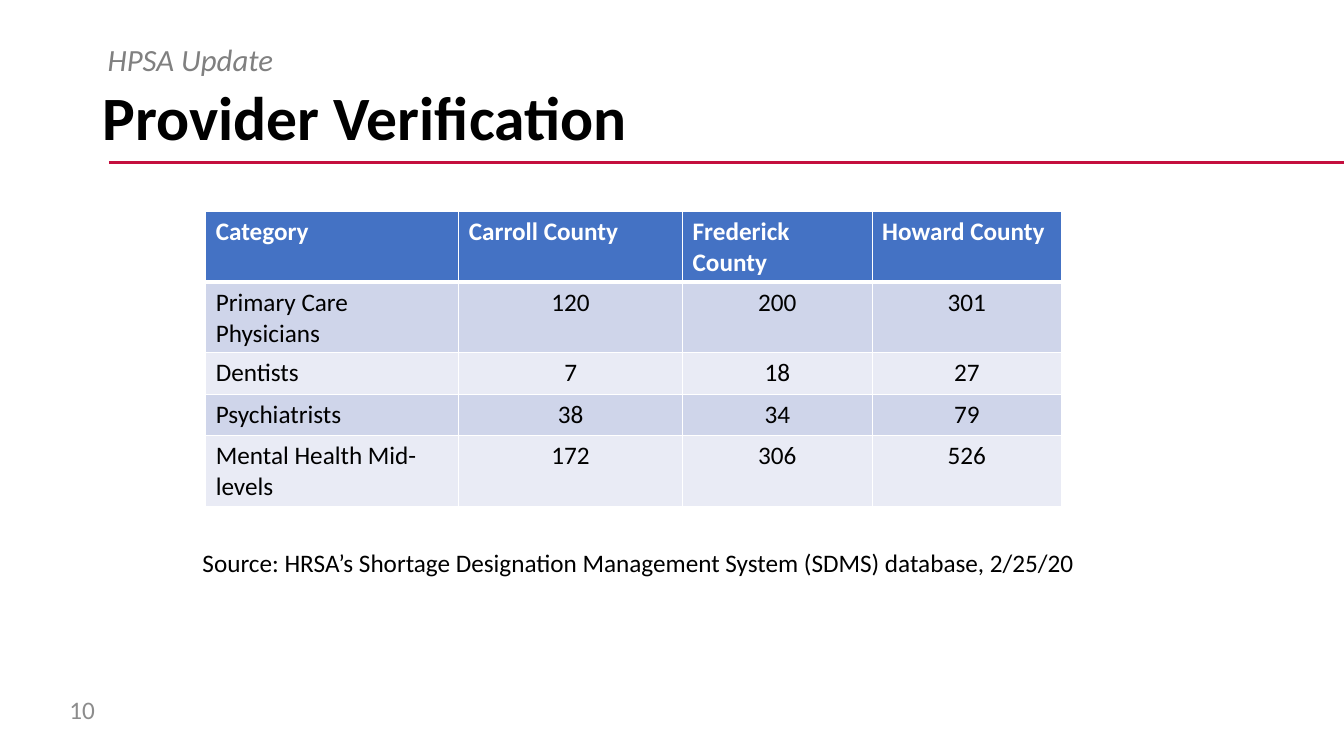
from dataclasses import dataclass

from lxml.etree import SubElement as Sub
from pptx import Presentation
from pptx.dml.color import RGBColor as RGB
from pptx.enum.shapes import MSO_CONNECTOR as Conn
from pptx.enum.text import MSO_ANCHOR as Anchor, PP_ALIGN as Align
from pptx.oxml.ns import qn
from pptx.util import Inches, Pt


@dataclass(frozen=True)
class Theme:
    font: str = "Calibri"
    white: str = "FFFFFF"
    black: str = "000000"
    gray: str = "808080"
    pale: str = "8C8C8C"
    red: str = "C40E3E"
    head: str = "4472C4"
    bands: tuple = ("CFD5EA", "E9EBF5")
    title: int = 44
    topic: int = 22
    body: int = 18


THEME = Theme()
COLS = (2.51, 2.22, 1.88, 1.88)
ROW = 0.41
ROWS = (
    ("Category", "Carroll County", "Frederick County", "Howard County"),
    ("Primary Care Physicians", "120", "200", "301"),
    ("Dentists", "7", "18", "27"),
    ("Psychiatrists", "38", "34", "79"),
    ("Mental Health Mid-levels", "172", "306", "526"),
)


def write(frame, text, size=THEME.body, color=THEME.black, bold=False,
          italic=False, align=Align.LEFT, space=1.0):
    """Put one formatted paragraph in a text frame."""
    para = frame.paragraphs[0]
    para.alignment = align
    para.line_spacing = space
    run = para.add_run()
    run.text = text
    font = run.font
    font.name, font.size = THEME.font, Pt(size)
    font.bold, font.italic = bold, italic
    font.color.rgb = RGB.from_string(color)


def add_text(slide, box, text, anchor=Anchor.TOP, **style):
    frame = slide.shapes.add_textbox(*map(Inches, box)).text_frame
    frame.word_wrap = True
    frame.vertical_anchor = anchor
    write(frame, text, **style)


def add_rule(slide, left, right, y):
    ends = map(Inches, (left, y, right, y))
    rule = slide.shapes.add_connector(Conn.STRAIGHT, *ends)
    rule.line.color.rgb = RGB.from_string(THEME.red)
    rule.line.width = Pt(2.25)
    Sub(rule._element.spPr, qn("a:effectLst"))


def set_edges(cell, top, bottom):
    """Draw white cell borders; top and bottom widths are in points."""
    props = cell._tc.get_or_add_tcPr()
    for side, width in (("L", 1), ("R", 1), ("T", top), ("B", bottom)):
        line = Sub(props, qn(f"a:ln{side}"), w=str(Pt(width)))
        fill = Sub(line, qn("a:solidFill"))
        Sub(fill, qn("a:srgbClr"), val=THEME.white)


def add_grid(slide, left, top):
    size = map(Inches, (left, top, sum(COLS), ROW * len(ROWS)))
    table = slide.shapes.add_table(len(ROWS), len(COLS), *size).table
    for col, width in zip(table.columns, COLS):
        col.width = Inches(width)
    for r, row in enumerate(ROWS):
        table.rows[r].height = Inches(ROW)
        head = r == 0
        fill = THEME.head if head else THEME.bands[(r - 1) % 2]
        color = THEME.white if head else THEME.black
        for c, text in enumerate(row):
            cell = table.cell(r, c)
            set_edges(cell, 3 if r == 1 else 1, 3 if head else 1)
            cell.fill.solid()
            cell.fill.fore_color.rgb = RGB.from_string(fill)
            align = Align.LEFT if head or c == 0 else Align.CENTER
            write(cell.text_frame, text, color=color, bold=head, align=align)


def main():
    deck = Presentation()
    deck.slide_width, deck.slide_height = Inches(13.33), Inches(7.5)
    slide = deck.slides.add_slide(deck.slide_layouts[6])

    # Heading
    add_rule(slide, 1.08, 13.33, 1.61)
    add_text(slide, (0.92, 0.65, 11.5, 1.09), "Provider Verification",
             anchor=Anchor.MIDDLE, size=THEME.title, bold=True, space=0.9)
    add_text(slide, (0.97, 0.4, 11.45, 0.38), "HPSA Update",
             size=THEME.topic, color=THEME.gray, italic=True, space=0.9)

    # Provider counts and their source
    add_grid(slide, 2.04, 2.1)
    add_text(slide, (1.91, 5.38, 8.88, 0.4),
             "Source: HRSA’s Shortage Designation Management System (SDMS) "
             "database, 2/25/20")

    # Page number
    add_text(slide, (0.59, 6.84, 0.59, 0.4), "10",
             anchor=Anchor.MIDDLE, color=THEME.pale)

    deck.save("out.pptx")


if __name__ == "__main__":
    main()
